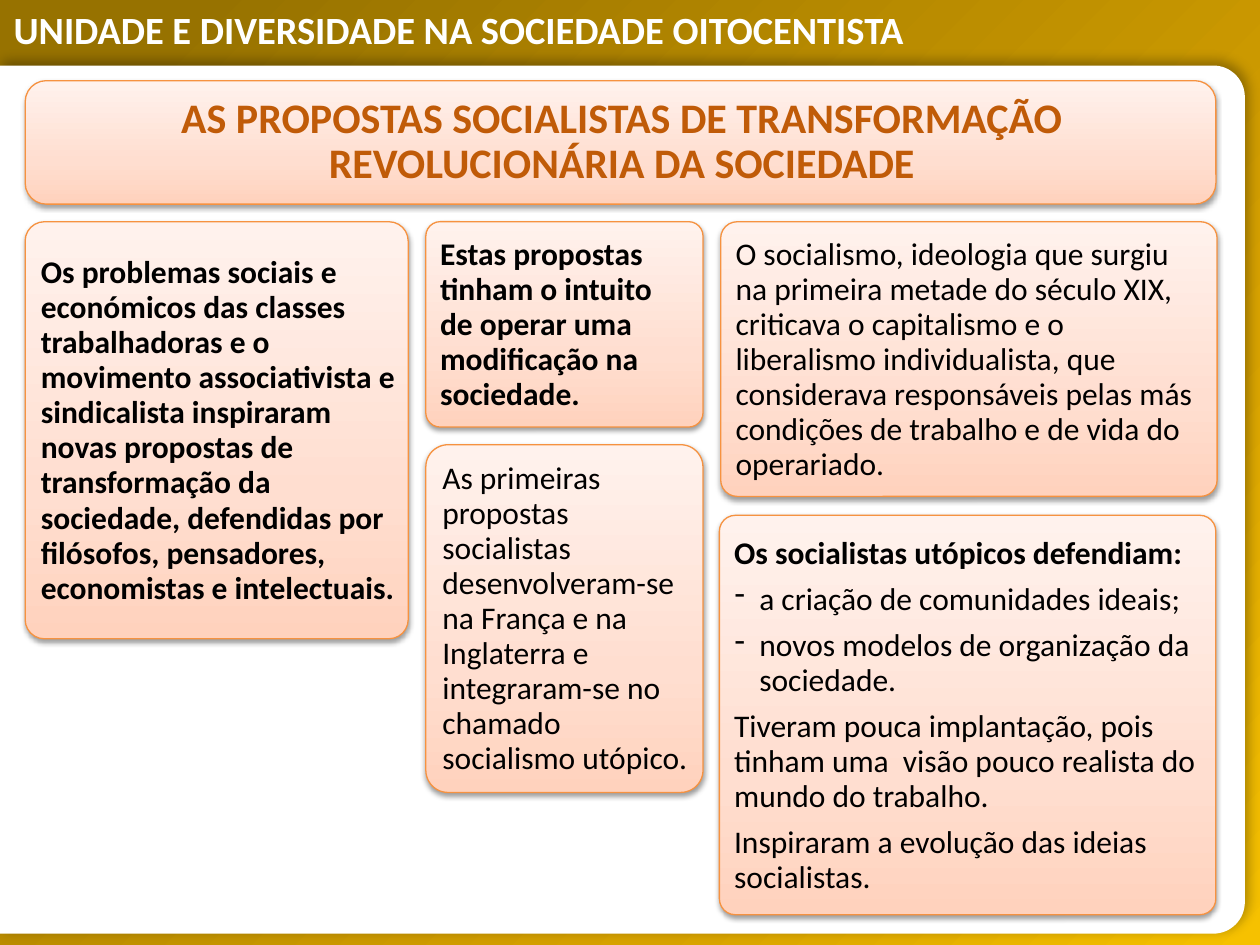
from dataclasses import dataclass
from math import cos, pi, sin

from lxml.etree import SubElement
from pptx import Presentation
from pptx.dml.color import RGBColor
from pptx.enum.shapes import MSO_SHAPE
from pptx.enum.text import MSO_ANCHOR, MSO_AUTO_SIZE, PP_ALIGN
from pptx.oxml.ns import qn
from pptx.util import Inches, Pt


@dataclass(frozen=True)
class Theme:
    font: str = "Calibri"
    white: str = "FFFFFF"
    black: str = "000000"
    heading: str = "C05B08"
    card_line: str = "F69240"
    gold: tuple = ((9, "977200"), (72, "D7A200"), (100, "F6C100"))
    peach: tuple = ((0, "FFD2BD"), (35, "FFDED0"), (100, "FFF2ED"))
    banner_size: int = 22
    heading_size: int = 24
    body_size: int = 18
    body_spacing: Pt = Pt(20)
    gap_ratio: float = 0.35


THEME = Theme()

CARDS = [
    # left, top, width, height, corner, paragraphs as (text, format)
    (0.2, 1.76, 3.04, 3.31, 0.05, [(
        "Os problemas sociais e económicos das classes trabalhadoras e o movimento "
        "associativista e sindicalista inspiraram novas propostas de transformação da "
        "sociedade, defendidas por filósofos, pensadores, economistas e intelectuais.",
        {"bold": True})]),
    (3.38, 3.53, 2.2, 2.76, 0.08, [(
        "As primeiras propostas socialistas desenvolveram-se na França e na Inglaterra "
        "e integraram-se no chamado socialismo utópico.", {})]),
    (3.38, 1.76, 2.2, 1.63, 0.07, [(
        "Estas propostas tinham o intuito de operar uma modificação na sociedade.",
        {"bold": True})]),
    (5.72, 1.76, 3.94, 2.18, 0.06, [(
        "O socialismo, ideologia que surgiu na primeira metade do século XIX, criticava "
        "o capitalismo e o liberalismo individualista, que considerava responsáveis "
        "pelas más condições de trabalho e de vida do operariado.", {"gap_ratio": 0})]),
    (5.71, 4.09, 3.94, 3.17, 0.04, [
        ("Os socialistas utópicos defendiam:", {"bold": True}),
        ("a criação de comunidades ideais;", {"bullet": "‐"}),
        ("novos modelos de organização da sociedade.", {"bullet": "‐"}),
        ("Tiveram pouca implantação, pois tinham uma  visão pouco realista do mundo "
         "do trabalho.", {}),
        ("Inspiraram a evolução das ideias socialistas.", {}),
    ]),
]


def set_gradient(shape, stops, angle):
    """Fill with any number of (percent, colour) stops; angle is clockwise."""
    shape.fill.gradient()
    shape.fill.gradient_angle = 360 - angle
    stop_list = shape._element.spPr.find(qn("a:gradFill")).find(qn("a:gsLst"))
    for old_stop in list(stop_list):
        stop_list.remove(old_stop)
    for percent, color in stops:
        stop = SubElement(stop_list, qn("a:gs"), pos=str(percent * 1000))
        SubElement(stop, qn("a:srgbClr"), val=color)


def set_shadow(shape, opacity, blur, distance, angle):
    shape.shadow.inherit = False
    effects = shape._element.spPr.find(qn("a:effectLst"))
    shadow = SubElement(
        effects, qn("a:outerShdw"), blurRad=str(Pt(blur)), dist=str(Pt(distance)),
        dir=str(angle * 60000), algn="ctr", rotWithShape="0")
    color = SubElement(shadow, qn("a:srgbClr"), val=THEME.black)
    SubElement(color, qn("a:alpha"), val=str(opacity * 1000))


def set_bullet(paragraph, character):
    properties = paragraph._p.get_or_add_pPr()
    properties.set("marL", str(Inches(0.2)))
    properties.set("indent", str(Inches(-0.2)))
    SubElement(properties, qn("a:buChar"), char=character)


def write_text(paragraph, text, *, size=THEME.body_size, color=THEME.black, bold=False,
               align=PP_ALIGN.LEFT, spacing=THEME.body_spacing,
               gap_ratio=THEME.gap_ratio, bullet=None):
    """gap_ratio is the space after, as a share of the type size."""
    paragraph.alignment = align
    paragraph.line_spacing = spacing
    paragraph.space_after = Pt(size * gap_ratio)
    if bullet:
        set_bullet(paragraph, bullet)
    run = paragraph.add_run()
    run.text = text
    run.font.name = THEME.font
    run.font.size = Pt(size)
    run.font.bold = bold
    run.font.color.rgb = RGBColor.from_string(color)


def add_background(slide, presentation):
    background = slide.shapes.add_shape(
        MSO_SHAPE.RECTANGLE, 0, 0, presentation.slide_width, presentation.slide_height)
    set_gradient(background, THEME.gold, 45)
    background.line.fill.background()
    background.shadow.inherit = False


def add_banner(slide, text):
    banner = slide.shapes.add_textbox(
        Inches(0.01), Inches(0.14), Inches(9.22), Inches(0.33))
    banner.text_frame.word_wrap = True
    write_text(banner.text_frame.paragraphs[0], text, size=THEME.banner_size,
               color=THEME.white, bold=True, spacing=Pt(16), gap_ratio=0)


def add_panel(slide):
    """White page, flush left, with its two right corners rounded."""
    top, right, bottom, radius, steps = 0.52, 9.88, 7.41, 0.25, 16
    outline = []
    for center_y, start in ((top + radius, -pi / 2), (bottom - radius, 0)):
        for step in range(steps + 1):
            angle = start + step / steps * pi / 2
            outline.append((Inches(right - radius + radius * cos(angle)),
                            Inches(center_y + radius * sin(angle))))
    outline.append((0, Inches(bottom)))
    builder = slide.shapes.build_freeform(0, Inches(top))
    builder.add_line_segments(outline, close=True)
    panel = builder.convert_to_shape()
    panel.fill.solid()
    panel.fill.fore_color.rgb = RGBColor.from_string(THEME.white)
    panel.line.fill.background()
    set_shadow(panel, 30, 7, 3, 315)


def add_card(slide, left, top, width, height, corner, paragraphs):
    card = slide.shapes.add_shape(
        MSO_SHAPE.ROUNDED_RECTANGLE,
        Inches(left), Inches(top), Inches(width), Inches(height))
    card.adjustments[0] = corner
    set_gradient(card, THEME.peach, 270)
    card.line.color.rgb = RGBColor.from_string(THEME.card_line)
    card.line.width = Pt(0.75)
    set_shadow(card, 38, 3.1, 1.6, 90)

    frame = card.text_frame
    frame.word_wrap = True
    frame.auto_size = MSO_AUTO_SIZE.SHAPE_TO_FIT_TEXT
    frame.vertical_anchor = MSO_ANCHOR.MIDDLE
    frame.margin_left = frame.margin_top = frame.margin_bottom = Inches(0.08)
    # A little slack on the right keeps the longest lines from wrapping.
    frame.margin_right = Inches(0.06)
    for index, (text, text_format) in enumerate(paragraphs):
        paragraph = frame.add_paragraph() if index else frame.paragraphs[0]
        write_text(paragraph, text, **text_format)


def main():
    presentation = Presentation()
    presentation.slide_width = Inches(10)
    presentation.slide_height = Inches(7.5)
    slide = presentation.slides.add_slide(presentation.slide_layouts[6])

    add_background(slide, presentation)
    add_banner(slide, "UNIDADE E DIVERSIDADE NA SOCIEDADE OITOCENTISTA")
    add_panel(slide)
    heading_format = {"size": THEME.heading_size, "color": THEME.heading, "bold": True,
                      "align": PP_ALIGN.CENTER, "spacing": 0.9}
    add_card(slide, 0.2, 0.64, 9.45, 0.98, 0.17, [(
        "AS PROPOSTAS SOCIALISTAS DE TRANSFORMAÇÃO REVOLUCIONÁRIA DA SOCIEDADE",
        heading_format)])
    for card in CARDS:
        add_card(slide, *card)

    presentation.save("out.pptx")


if __name__ == "__main__":
    main()
